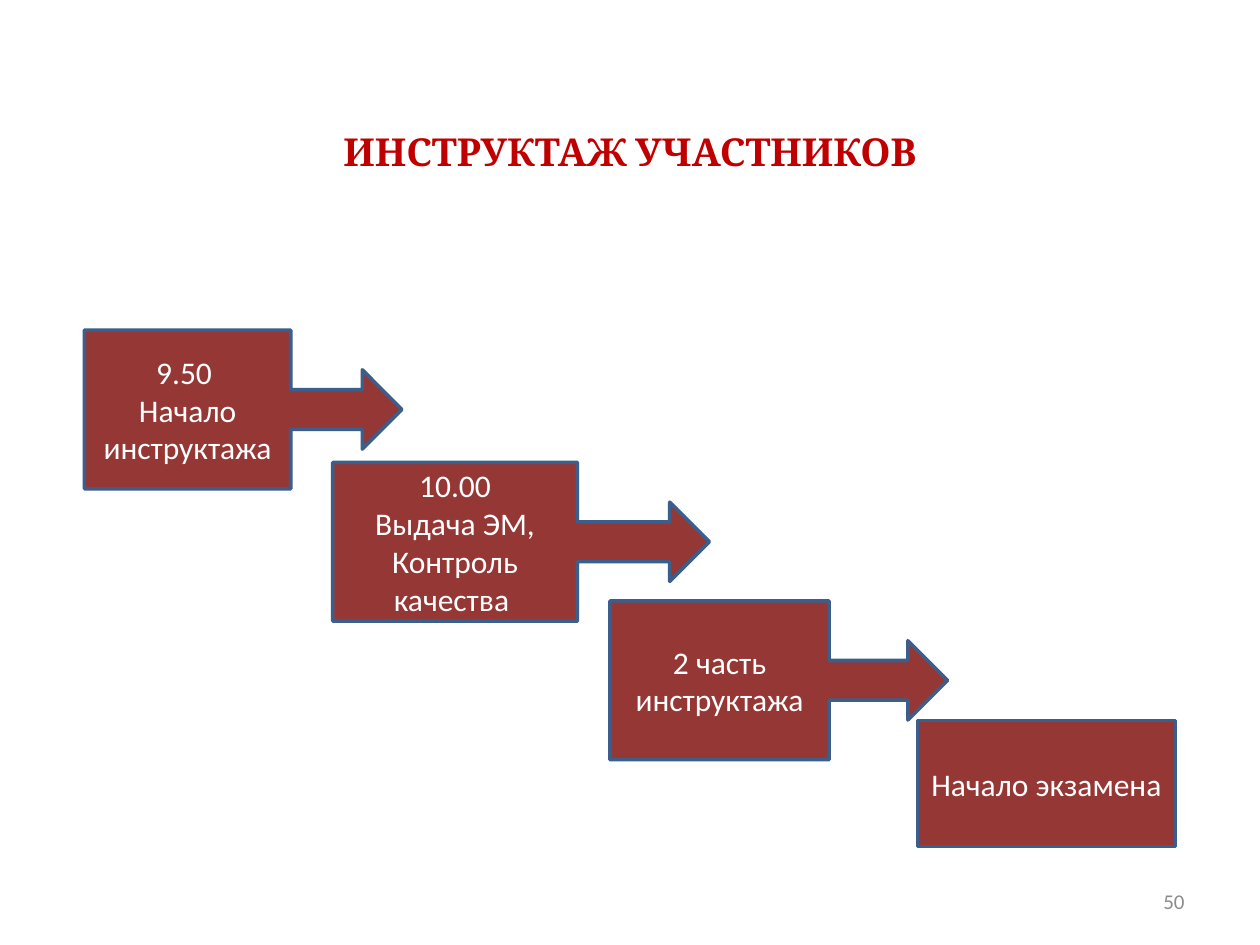
import pptx
import pptx.dml.color
import pptx.enum.shapes
import pptx.enum.text
import pptx.util

Pt = pptx.util.Pt
ALIGN = pptx.enum.text.PP_ALIGN
SHAPE = pptx.enum.shapes.MSO_SHAPE

COLORS = {
    "title": "C00000",
    "number": "8C8C8C",
    "step": "953735",
    "outline": "3A5F8C",
    "step_text": "FFFFFF",
}


class SlideBuilder:
    """Holds the style and the current slide."""

    body_font = "Calibri"
    title_font = "Cambria"
    step_size = 18
    outline_width = 2

    def __init__(self, slide):
        self.slide = slide

    def color(self, name):
        return pptx.dml.color.RGBColor.from_string(COLORS[name])

    def fill_text(self, frame, lines, size, color, align, font, bold=False):
        frame.word_wrap = True
        frame.vertical_anchor = pptx.enum.text.MSO_ANCHOR.MIDDLE
        for index, line in enumerate(lines):
            paragraph = frame.paragraphs[0] if index == 0 else frame.add_paragraph()
            paragraph.alignment = align
            run = paragraph.add_run()
            run.text = line
            run.font.name = font
            run.font.size = Pt(size)
            run.font.bold = bold
            run.font.color.rgb = self.color(color)

    def label(self, box, text, size, color, align, font, bold=False):
        label = self.slide.shapes.add_textbox(*map(Pt, box))
        self.fill_text(label.text_frame, [text], size, color, align, font, bold)

    def step(self, kind, box, lines):
        step = self.slide.shapes.add_shape(kind, *map(Pt, box))
        step.shadow.inherit = False
        step.fill.solid()
        step.fill.fore_color.rgb = self.color("step")
        step.line.color.rgb = self.color("outline")
        step.line.width = Pt(self.outline_width)
        self.fill_text(step.text_frame, lines, self.step_size, "step_text",
                       ALIGN.CENTER, self.body_font)


def main():
    deck = pptx.Presentation()
    deck.slide_width, deck.slide_height = Pt(720), Pt(540)
    builder = SlideBuilder(deck.slides.add_slide(deck.slide_layouts[6]))

    # Title and slide number
    builder.label((36, 61.2, 648, 50.4), "ИНСТРУКТАЖ УЧАСТНИКОВ", 22, "title",
                  ALIGN.CENTER, builder.title_font, bold=True)
    builder.label((516.24, 500.4, 167.76, 28.8), "50", 12, "number",
                  ALIGN.RIGHT, builder.body_font)

    # Steps leading to the exam: left, top, width, lines
    briefing_steps = [
        (48.24, 188.64, 181.44, ["9.50 ", "Начало инструктажа"]),
        (190.08, 264.24, 215.28, ["10.00", "Выдача ЭМ,", "Контроль качества "]),
        (348.48, 343.44, 192.96, ["2 часть инструктажа"]),
    ]
    for left, top, width, lines in briefing_steps:
        builder.step(SHAPE.RIGHT_ARROW_CALLOUT, (left, top, width, 90.72), lines)

    # Start of the exam
    builder.step(SHAPE.RECTANGLE, (524.16, 411.84, 147.6, 72), ["Начало экзамена"])

    deck.save("out.pptx")


if __name__ == "__main__":
    main()
